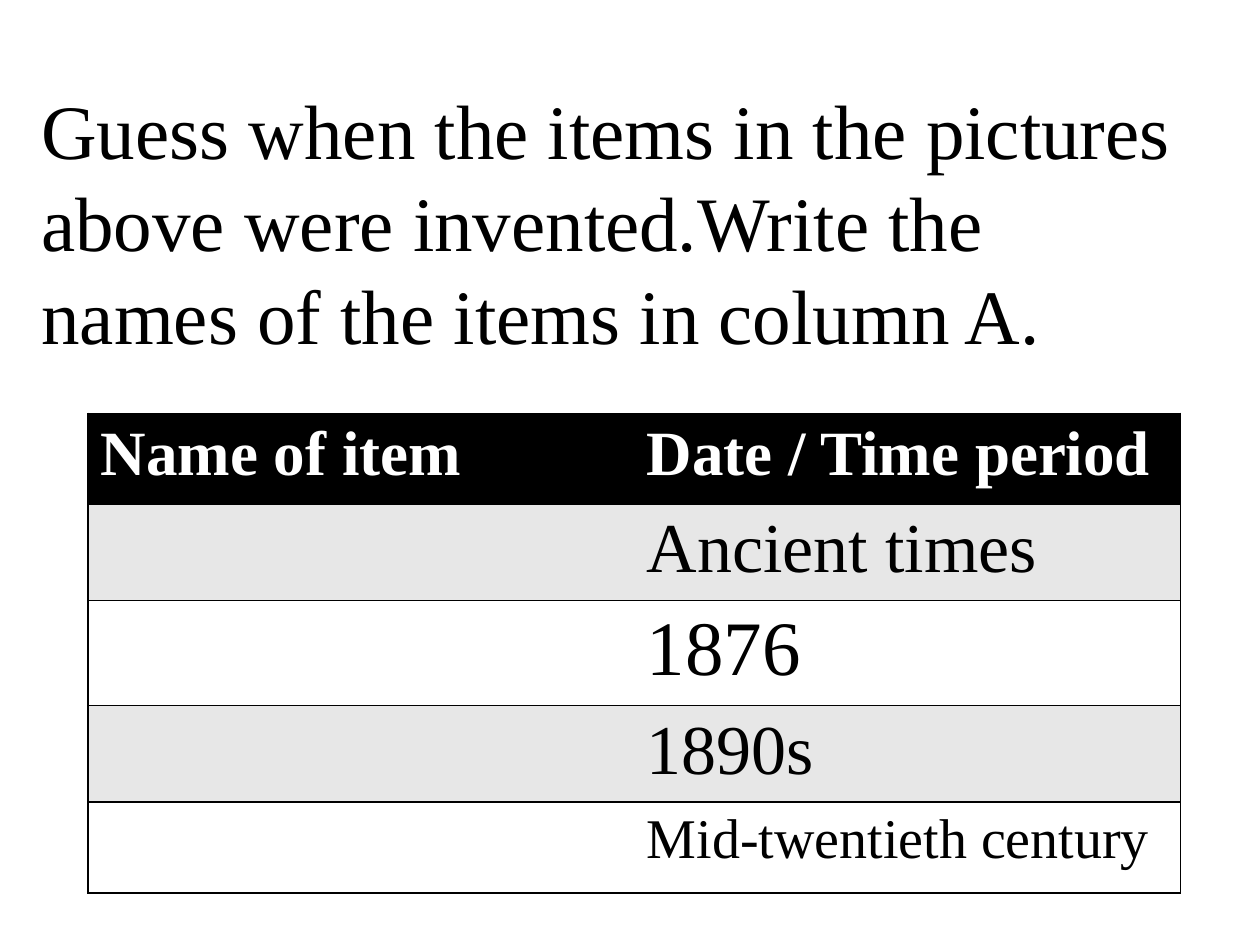
from lxml.etree import SubElement
from pptx import Presentation
from pptx.dml.color import RGBColor
from pptx.enum.text import MSO_ANCHOR
from pptx.oxml.ns import qn
from pptx.util import Inches, Pt

FONT = "Times New Roman"
BLACK, WHITE, GREY = "000000", "FFFFFF", "E7E7E7"
INSTRUCTION = (
    "Guess when the items in the pictures above were invented."
    "Write the names of the items in column A."
)
ROWS = [
    ("Name of item", "Date / Time period", 36),
    ("", "Ancient times", 40),
    ("", "1876", 44),
    ("", "1890s", 40),
    ("", "Mid-twentieth century", 32),
]


def color(value):
    """Turn a hex string into a colour."""
    return RGBColor.from_string(value)


def write(text_frame, text, size, font_color=BLACK, bold=False):
    """Set the text of a frame and format its runs."""
    text_frame.text = text
    for run in text_frame.paragraphs[0].runs:
        run.font.name = FONT
        run.font.size = Pt(size)
        run.font.bold = bold
        run.font.color.rgb = color(font_color)


def set_borders(cell, visible_sides):
    """Draw thin black lines on the named sides and none on the others."""
    properties = cell._tc.get_or_add_tcPr()
    for side in "LRTB":
        line = SubElement(properties, qn(f"a:ln{side}"), w=str(Pt(1)))
        if side in visible_sides:
            fill = SubElement(line, qn("a:solidFill"))
            SubElement(fill, qn("a:srgbClr"), val=BLACK)
        else:
            SubElement(line, qn("a:noFill"))


def add_instruction(slide, left, top, width, height):
    """Add the instruction, centred vertically in its box."""
    shape = slide.shapes.add_textbox(left, top, width, height)
    text_frame = shape.text_frame
    text_frame.word_wrap = True
    text_frame.vertical_anchor = MSO_ANCHOR.MIDDLE
    write(text_frame, INSTRUCTION, 44)


def add_date_table(slide, left, top, width, row_height):
    """Add the table that pairs items with dates."""
    shape = slide.shapes.add_table(
        len(ROWS), 2, left, top, width, row_height * len(ROWS)
    )
    table = shape.table
    for row_index, (item, date, size) in enumerate(ROWS):
        is_header = row_index == 0
        if is_header:
            fill_color = BLACK
        else:
            fill_color = GREY if row_index % 2 else WHITE
        for column_index, text in enumerate((item, date)):
            cell = table.cell(row_index, column_index)
            set_borders(cell, "RTB" if column_index else "LTB")
            cell.fill.solid()
            cell.fill.fore_color.rgb = color(fill_color)
            font_color = WHITE if is_header else BLACK
            write(cell.text_frame, text, size, font_color, is_header)


def main():
    """Build and save the presentation."""
    presentation = Presentation()
    presentation.slide_width = Inches(10)
    presentation.slide_height = Inches(7.5)
    slide = presentation.slides.add_slide(presentation.slide_layouts[6])
    add_instruction(slide, Inches(0.23), Inches(0.31), Inches(9.22), Inches(2.89))
    add_date_table(slide, Inches(0.7), Inches(3.28), Inches(8.67), Inches(0.72))
    presentation.save("out.pptx")


if __name__ == "__main__":
    main()
